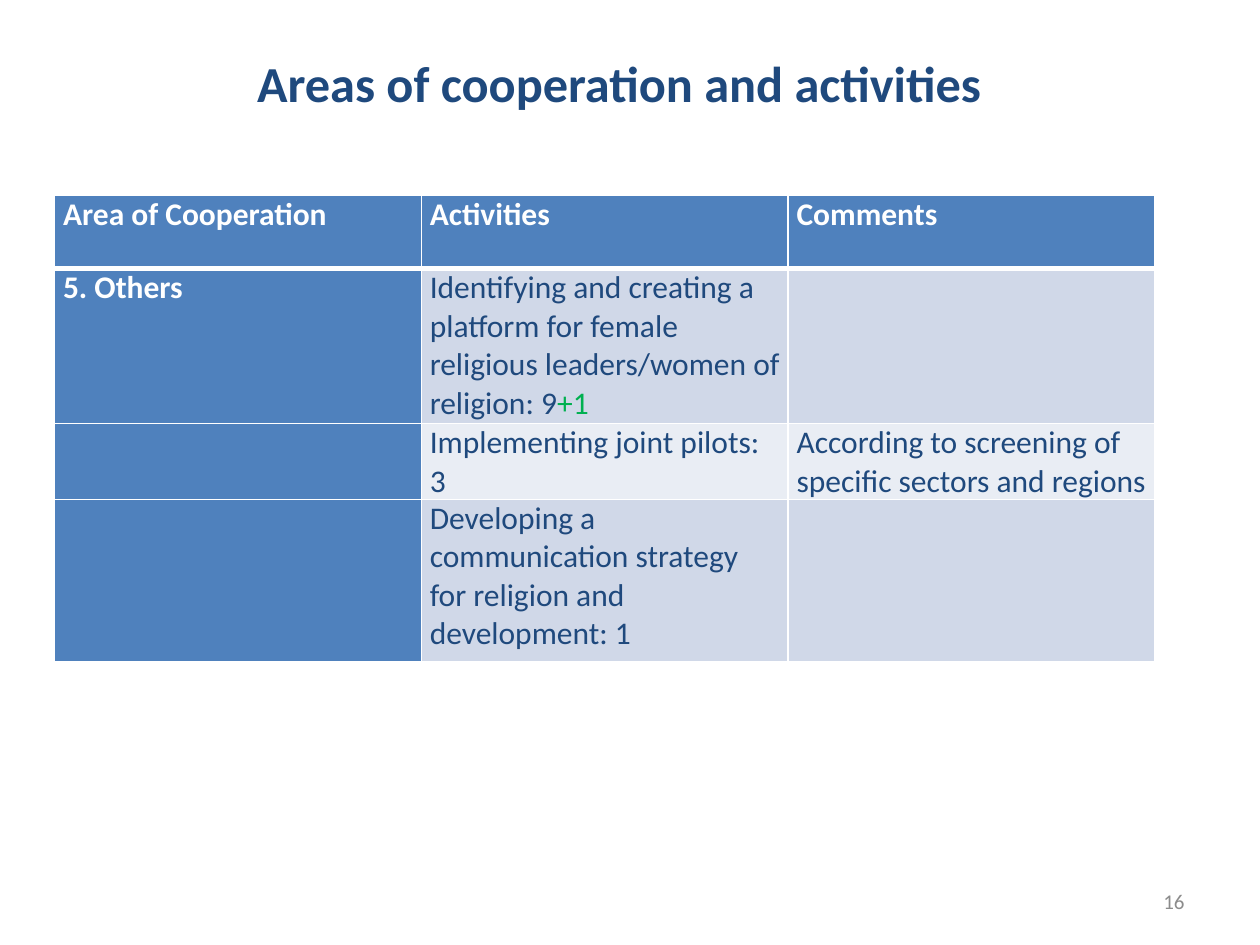
"""Build the slide listing areas of cooperation and their activities."""
from lxml.etree import SubElement
from pptx import Presentation
from pptx.dml.color import RGBColor
from pptx.enum.text import MSO_ANCHOR, PP_ALIGN
from pptx.oxml.ns import qn
from pptx.util import Pt

COLORS = {"navy": "1F497D", "blue": "4F81BD", "band": "D0D8E8", "pale": "E9EDF4",
          "white": "FFFFFF", "green": "00B050", "gray": "8C8C8C"}
TITLE = "Areas of cooperation and activities"
PAGE = "16"
ROWS = [
    (42, ["Area of Cooperation", "Activities", "Comments"]),
    (88.5, ["5. Others",
            "Identifying and creating a platform for female religious leaders/women of religion: 9|+1",
            ""]),
    (43, ["", "Implementing joint pilots: 3",
          "According to screening of specific sectors and regions"]),
    (93, ["", "Developing a communication strategy for religion and development: 1", ""]),
]
LEFT, TOP, COL_W = 31.2, 111.6, 209.6
CELL_MARGINS = {"margin_left": Pt(4.8), "margin_right": Pt(4.8),
                "margin_top": 0, "margin_bottom": 0}


def rgb(name):
    return RGBColor.from_string(COLORS[name])


def set_attrs(obj, values):
    for name, value in values.items():
        setattr(obj, name, value)


def add_run(p, text, size, color, bold=False):
    r = p.add_run()
    r.text = text
    set_attrs(r.font, {"name": "Calibri", "size": Pt(size), "bold": bold})
    r.font.color.rgb = rgb(color)


def add_label(s, box, text, size, color, align, anchor, bold=False):
    tf = s.shapes.add_textbox(*map(Pt, box)).text_frame
    set_attrs(tf, {"word_wrap": True, "vertical_anchor": anchor})
    p = tf.paragraphs[0]
    p.alignment = align
    add_run(p, text, size, color, bold)


def set_borders(cell, widths):
    tc_pr = cell._tc.get_or_add_tcPr()
    for i, (side, width) in enumerate(widths.items()):
        ln = SubElement(tc_pr, qn(f"a:ln{side}"), w=str(Pt(width)))
        fill = SubElement(ln, qn("a:solidFill"))
        SubElement(fill, qn("a:srgbClr"), val=COLORS["white"])
        tc_pr.insert(i, ln)


def add_grid(s):
    n_cols = len(ROWS[0][1])
    height = sum(h for h, _ in ROWS)
    table = s.shapes.add_table(len(ROWS), n_cols, Pt(LEFT), Pt(TOP),
                               Pt(COL_W * n_cols), Pt(height)).table
    for col in table.columns:
        col.width = Pt(COL_W)
    for i, (row_h, texts) in enumerate(ROWS):
        table.rows[i].height = Pt(row_h)
        for j, text in enumerate(texts):
            cell = table.cell(i, j)
            head = i == 0 or j == 0
            set_attrs(cell, CELL_MARGINS)
            cell.fill.solid()
            cell.fill.fore_color.rgb = rgb("blue" if head else "band" if i % 2 else "pale")
            set_borders(cell, {"L": 1, "R": 1, "T": 3 if i == 1 else 1, "B": 3 if i == 0 else 1})
            main, _, extra = text.partition("|")
            p = cell.text_frame.paragraphs[0]
            if main:
                add_run(p, main, 18, "white" if head else "navy", head)
            if extra:
                add_run(p, extra, 18, "green")


def main():
    prs = Presentation()
    set_attrs(prs, {"slide_width": Pt(720), "slide_height": Pt(540)})
    s = prs.slides.add_slide(prs.slide_layouts[6])
    add_label(s, (48, 26, 612, 76), TITLE, 28.8, "navy", PP_ALIGN.CENTER, MSO_ANCHOR.TOP, True)
    add_grid(s)
    add_label(s, (516, 500.5, 168, 28.75), PAGE, 12, "gray", PP_ALIGN.RIGHT, MSO_ANCHOR.MIDDLE)
    prs.save("out.pptx")


if __name__ == "__main__":
    main()
